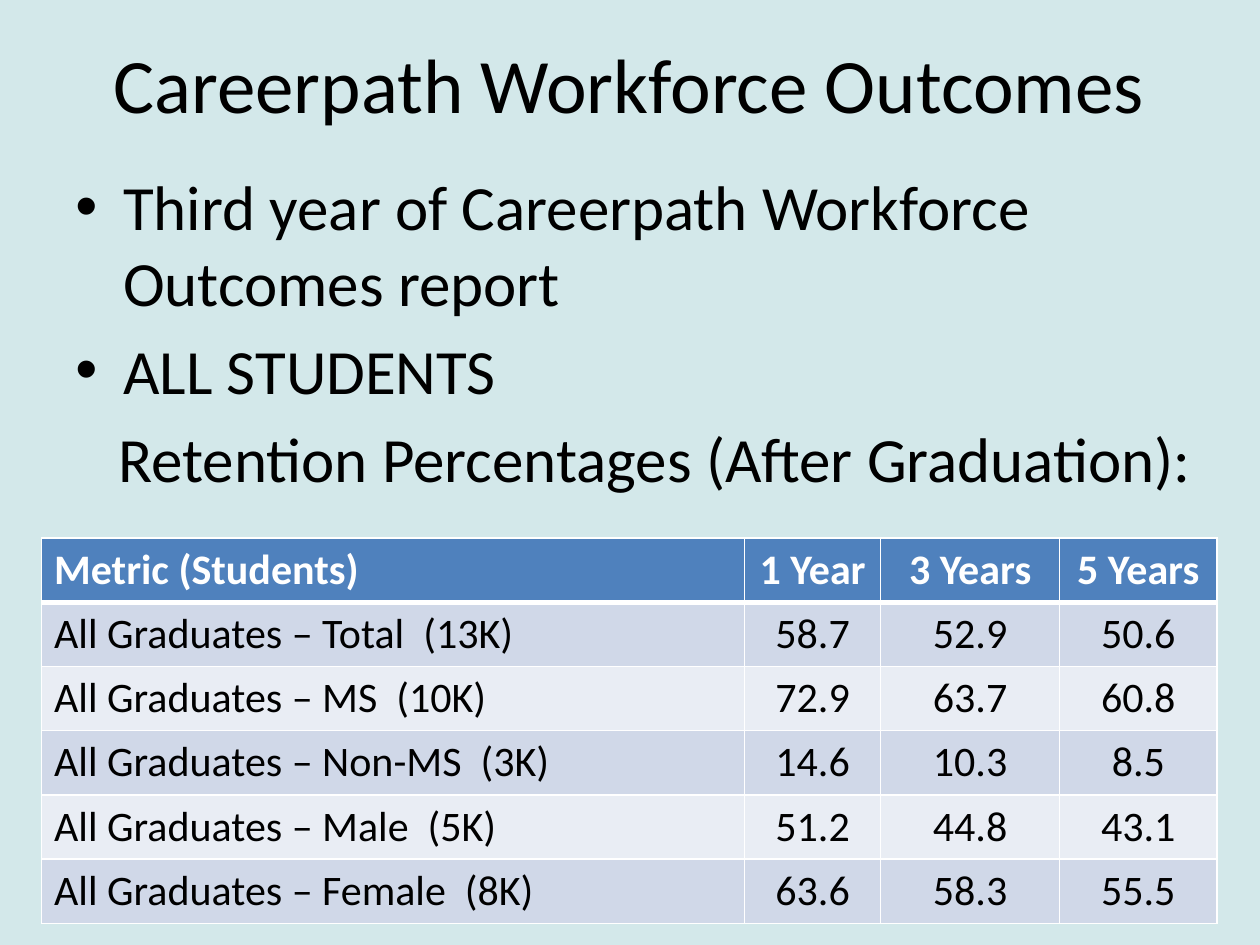
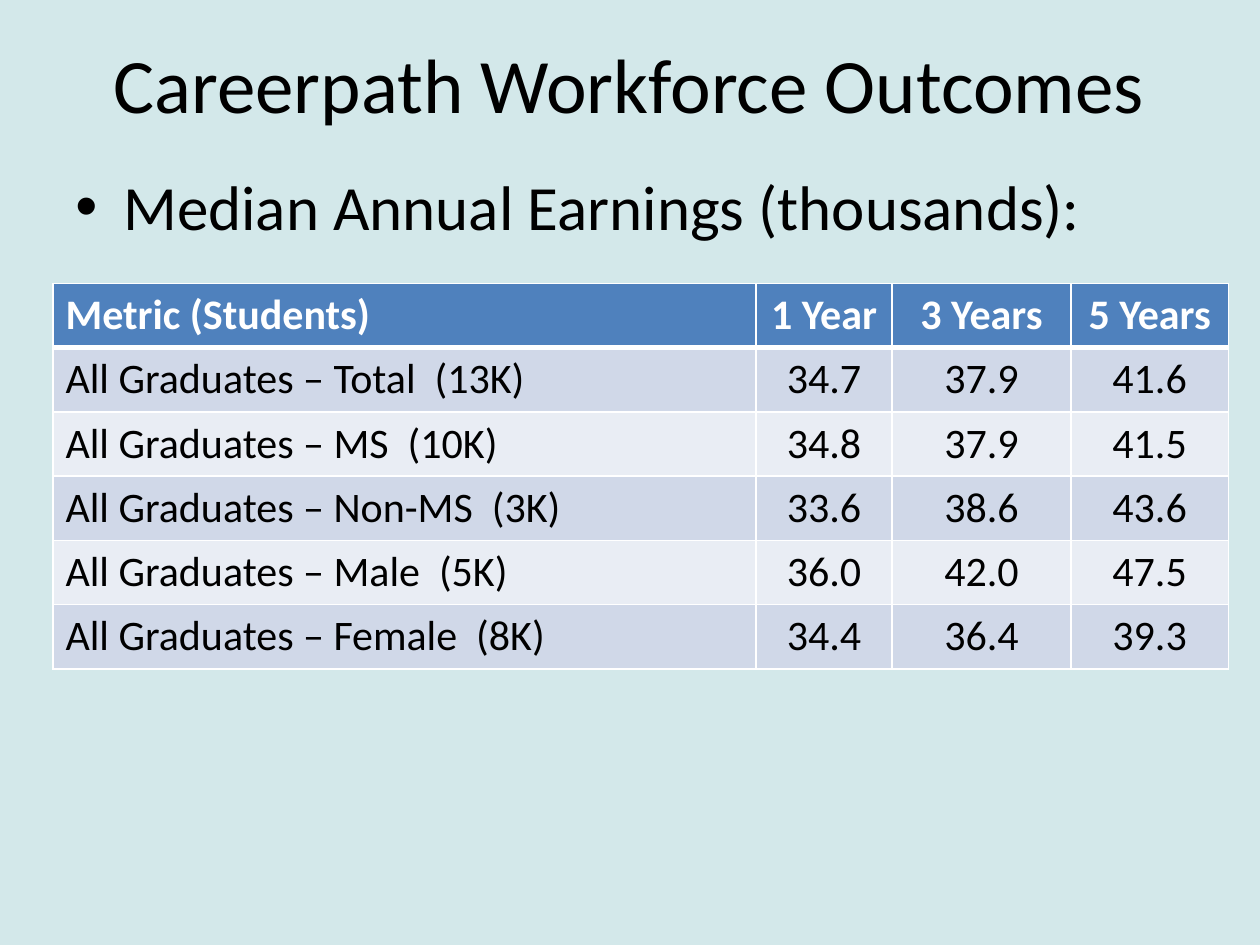
from dataclasses import dataclass

from lxml import etree
from pptx import Presentation
from pptx.dml.color import RGBColor
from pptx.enum.text import MSO_ANCHOR, PP_ALIGN
from pptx.oxml.ns import qn
from pptx.util import Inches, Pt

LEFT, CENTER = PP_ALIGN.LEFT, PP_ALIGN.CENTER
MIDDLE, TOP = MSO_ANCHOR.MIDDLE, MSO_ANCHOR.TOP
TITLE_ONLY = 5


@dataclass(frozen=True)
class Theme:
    font: str = "Calibri"
    background: str = "D3E8EA"
    text: str = "000000"
    header_text: str = "FFFFFF"
    header: str = "4F81BD"
    bands: tuple = ("D0D8E8", "E9EDF4")
    border: str = "FFFFFF"
    title_size: int = 44
    body_size: int = 36
    table_size: int = 24


THEME = Theme()
TITLE = "Careerpath Workforce Outcomes"
TITLE_BOX = (0.33, 0.03, 9.33, 1.25)
BODY_BOX = (0.5, 1.28, 9.17, 5.97)
COLUMN_WIDTHS = (5.58, 1.08, 1.42, 1.25)
ROW_HEIGHT = 0.51
HEADERS = ("Metric (Students)", "1 Year", "3 Years", "5 Years")
GROUPS = ("Total  (13K)", "MS  (10K)", "Non-MS  (3K)", "Male  (5K)", "Female  (8K)")
BULLET_INDENT, PLAIN_INDENT = 0.38, 0.34

RETENTION = (
    ("58.7", "52.9", "50.6"),
    ("72.9", "63.7", "60.8"),
    ("14.6", "10.3", "8.5"),
    ("51.2", "44.8", "43.1"),
    ("63.6", "58.3", "55.5"),
)
EARNINGS = (
    ("34.7", "37.9", "41.6"),
    ("34.8", "37.9", "41.5"),
    ("33.6", "38.6", "43.6"),
    ("36.0", "42.0", "47.5"),
    ("34.4", "36.4", "39.3"),
)


def format_paragraph(p, size, color=THEME.text, align=LEFT, bold=False):
    p.alignment = align
    p.font.name = THEME.font
    p.font.size = Pt(size)
    p.font.bold = bold
    p.font.color.rgb = RGBColor.from_string(color)


def set_indent(p, bulleted):
    pPr = p._p.get_or_add_pPr()
    margin = Inches(BULLET_INDENT if bulleted else PLAIN_INDENT)
    pPr.set("marL", str(margin))
    pPr.set("indent", str(-margin if bulleted else 0))
    marks = [("buFont", "typeface", "Arial"), ("buChar", "char", "•")]
    for tag, name, value in marks if bulleted else []:
        mark = etree.Element(qn(f"a:{tag}"))
        mark.set(name, value)
        pPr.insert_element_before(mark, "a:tabLst", "a:defRPr", "a:extLst")


def set_borders(cell, top_width, bottom_width):
    tcPr = cell._tc.get_or_add_tcPr()
    widths = {"L": 1, "R": 1, "T": top_width, "B": bottom_width}
    for i, (side, width) in enumerate(widths.items()):
        ln = etree.Element(qn(f"a:ln{side}"), w=str(Pt(width)))
        fill = etree.SubElement(ln, qn("a:solidFill"))
        etree.SubElement(fill, qn("a:srgbClr")).set("val", THEME.border)
        tcPr.insert(i, ln)


def add_title(s, box):
    sp = s.shapes.title
    sp.left, sp.top, sp.width, sp.height = map(Inches, box)
    tf = sp.text_frame
    tf.text = TITLE
    tf.vertical_anchor = MIDDLE
    format_paragraph(tf.paragraphs[0], THEME.title_size, align=CENTER)


def add_body(s, box, lines):
    tf = s.shapes.add_textbox(*map(Inches, box)).text_frame
    tf.word_wrap = True
    tf.vertical_anchor = TOP
    for i, (text, bulleted) in enumerate(lines):
        p = tf.add_paragraph() if i else tf.paragraphs[0]
        p.text = text
        p.space_before = Pt(THEME.body_size * 0.2)
        format_paragraph(p, THEME.body_size)
        set_indent(p, bulleted)


def add_outcomes_table(s, left, top, values):
    rows = [HEADERS]
    rows += [(f"All Graduates – {group}", *row) for group, row in zip(GROUPS, values)]
    frame = s.shapes.add_table(
        len(rows), len(HEADERS), Inches(left), Inches(top),
        Inches(sum(COLUMN_WIDTHS)), Inches(ROW_HEIGHT * len(rows)))
    table = frame.table
    for column, width in zip(table.columns, COLUMN_WIDTHS):
        column.width = Inches(width)
    for r, row in enumerate(rows):
        is_header = r == 0
        fill = THEME.header if is_header else THEME.bands[(r - 1) % 2]
        color = THEME.header_text if is_header else THEME.text
        for c, text in enumerate(row):
            cell = table.cell(r, c)
            cell.text = text
            cell.fill.solid()
            cell.fill.fore_color.rgb = RGBColor.from_string(fill)
            format_paragraph(cell.text_frame.paragraphs[0], THEME.table_size,
                             color, CENTER if c else LEFT, is_header)
            set_borders(cell, 3 if r == 1 else 1, 3 if is_header else 1)


def add_outcomes_slide(prs, lines, table_left, table_top, values):
    s = prs.slides.add_slide(prs.slide_layouts[TITLE_ONLY])
    s.background.fill.solid()
    s.background.fill.fore_color.rgb = RGBColor.from_string(THEME.background)
    add_body(s, BODY_BOX, lines)
    add_title(s, TITLE_BOX)
    add_outcomes_table(s, table_left, table_top, values)


def main():
    prs = Presentation()
    prs.slide_width, prs.slide_height = Inches(10), Inches(7.5)
    add_outcomes_slide(prs, [
        (f"Third year of {TITLE} report", True),
        ("ALL STUDENTS", True),
        ("Retention Percentages (After Graduation):", False),
    ], 0.33, 4.27, RETENTION)
    add_outcomes_slide(prs, [("Median Annual Earnings (thousands):", True)],
                       0.42, 2.25, EARNINGS)
    prs.save("out.pptx")


if __name__ == "__main__":
    main()
